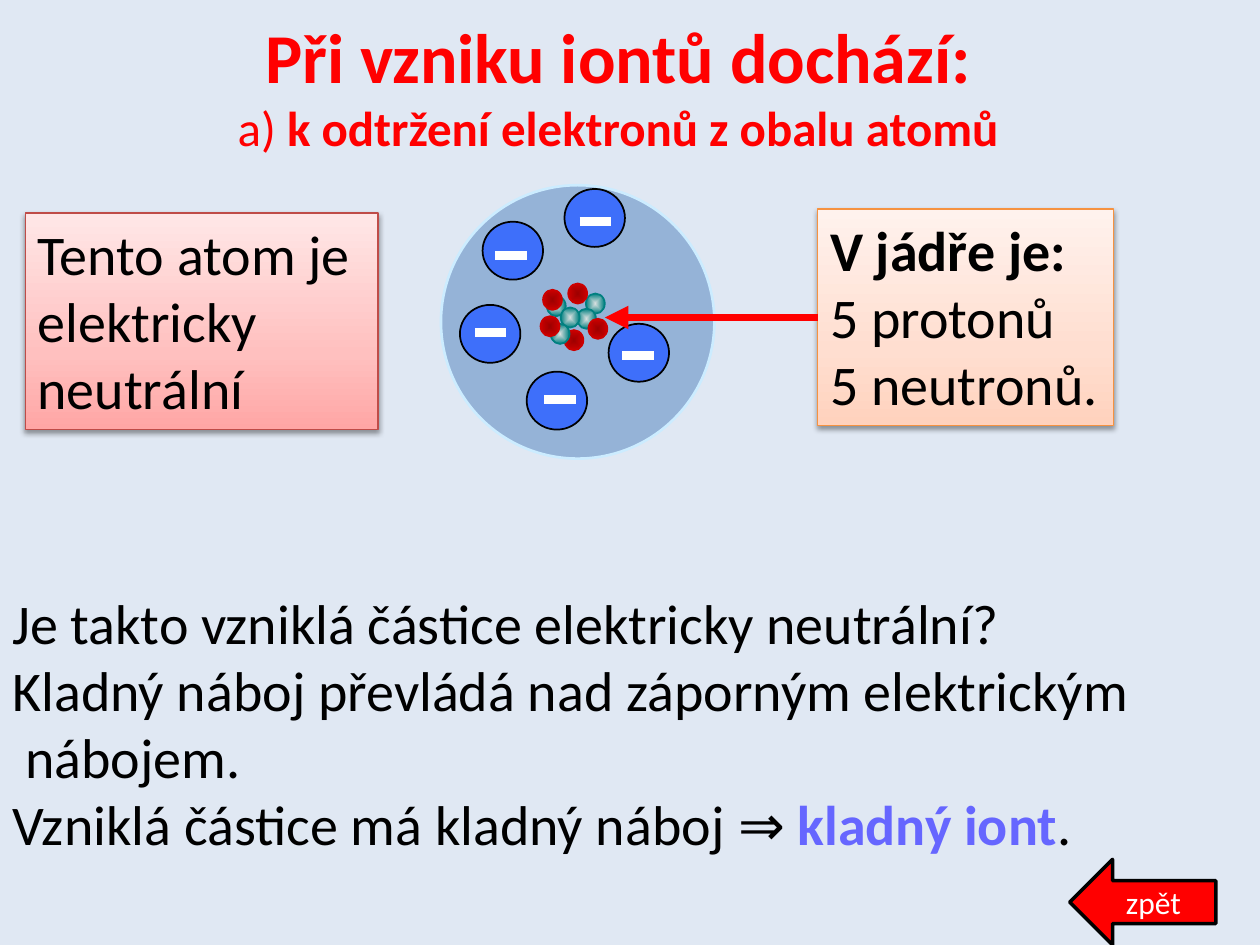
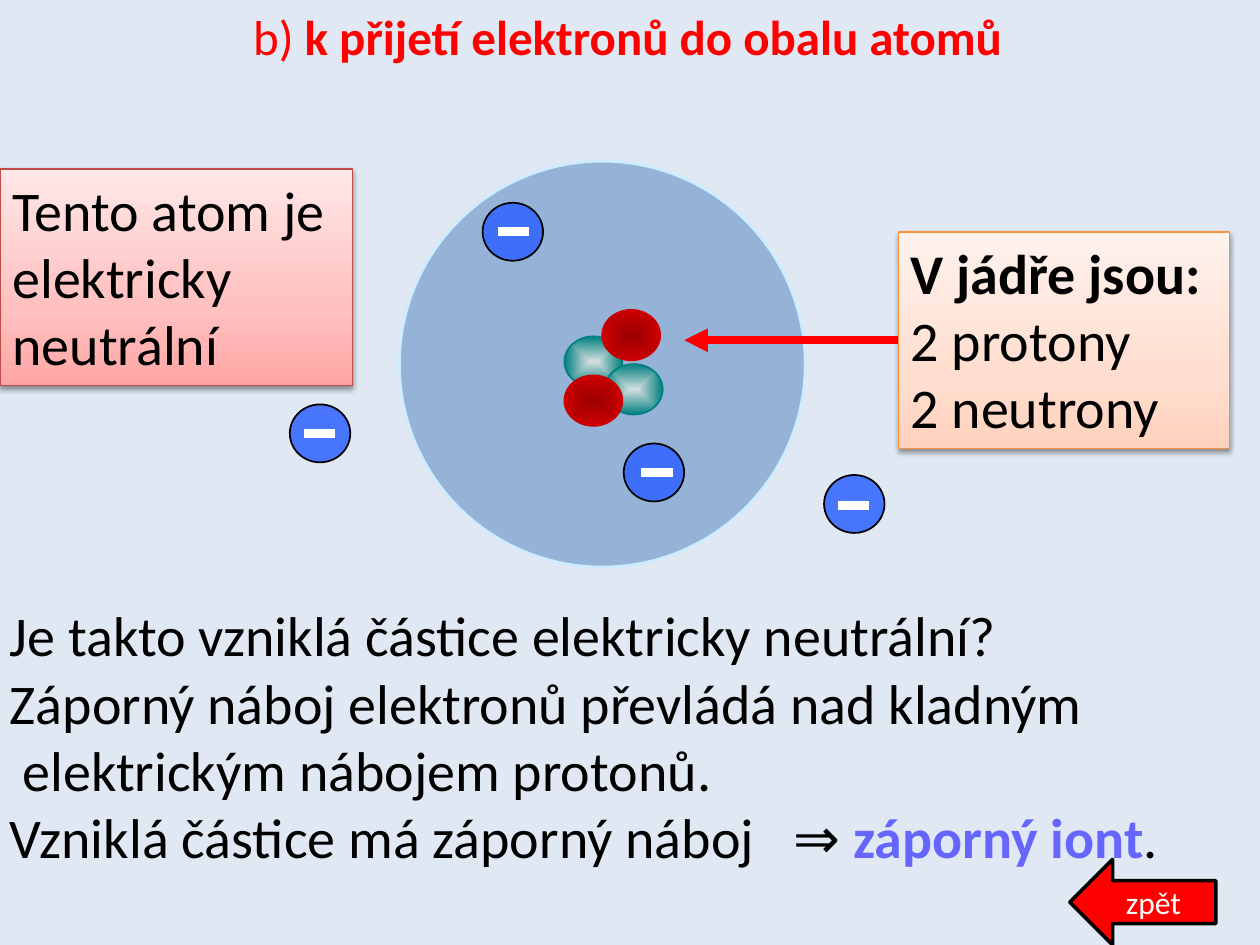
from lxml.etree import SubElement
from pptx import Presentation
from pptx.dml.color import RGBColor
from pptx.enum.shapes import MSO_CONNECTOR, MSO_SHAPE
from pptx.enum.text import MSO_ANCHOR, MSO_AUTO_SIZE, PP_ALIGN
from pptx.oxml.ns import qn
from pptx.util import Inches, Pt

FONT = "Calibri"
BACKGROUND = "E0E8F3"
RED, BLACK, WHITE, ION_BLUE = "FF0000", "000000", "FFFFFF", "6666FF"
SHELL, SHELL_EDGE, ELECTRON = "95B3D7", "CCECFF", "3366FF"
PROTON = [(0, "9E0000"), (100, "CC0000")]
NEUTRON = [(0, "D5DEDE"), (100, "008080")]
PEACH = [(0, "FFD2BD"), (35, "FFDED0"), (100, "FFF2ED")]
PINK = [(0, "FFA6A5"), (35, "FFC0BF"), (100, "FFE7E7")]
BOLD = {"bold": True}
ION = {"bold": True, "color": ION_BLUE}
ELECTRON_SIZE = (0.48, 0.46)
MINUS_WIDTH = 0.25


def add_piece(shapes, kind, place, fill, edge, width, alpha=None, card=False):
    """Add a shape; a list fill is a gradient, linear with shadow for a card, else from the centre."""
    piece = shapes.add_shape(kind, *[Inches(value) for value in place])
    piece.shadow.inherit = False
    properties = piece.element.spPr
    if isinstance(fill, list):
        gradient = SubElement(properties, qn("a:gradFill"), rotWithShape="1")
        properties.find(qn("a:prstGeom")).addnext(gradient)
        stops = SubElement(gradient, qn("a:gsLst"))
        for position, color in fill:
            stop = SubElement(stops, qn("a:gs"), pos=str(position * 1000))
            SubElement(stop, qn("a:srgbClr"), val=color)
        if card:
            SubElement(gradient, qn("a:lin"), ang="16200000", scaled="1")
        else:
            centre = SubElement(gradient, qn("a:path"), path="shape")
            SubElement(centre, qn("a:fillToRect"), l="50000", t="50000", r="50000", b="50000")
    else:
        piece.fill.solid()
        piece.fill.fore_color.rgb = RGBColor.from_string(fill)
    if alpha:
        tint = properties.find(qn("a:solidFill")).find(qn("a:srgbClr"))
        SubElement(tint, qn("a:alpha"), val=str(alpha * 1000))
    if card:
        shadow = SubElement(properties.find(qn("a:effectLst")), qn("a:outerShdw"), blurRad="40000",
                            dist="20000", dir="5400000", rotWithShape="0")
        tint = SubElement(shadow, qn("a:srgbClr"), val=BLACK)
        SubElement(tint, qn("a:alpha"), val="38000")
    piece.line.color.rgb = RGBColor.from_string(edge)
    piece.line.width = Pt(width)
    return piece


def write(box, paragraphs, size=32, color=BLACK, align=PP_ALIGN.LEFT, anchor=MSO_ANCHOR.TOP,
          wrap=True, grow=True, tab=None):
    """Fill a box with paragraphs, each a list of (text, format) spans."""
    frame = box.text_frame
    frame.word_wrap = wrap
    frame.vertical_anchor = anchor
    frame.auto_size = MSO_AUTO_SIZE.SHAPE_TO_FIT_TEXT if grow else MSO_AUTO_SIZE.NONE
    for index, spans in enumerate(paragraphs):
        para = frame.add_paragraph() if index else frame.paragraphs[0]
        para.alignment = align
        if tab:
            tabs = SubElement(para._p.get_or_add_pPr(), qn("a:tabLst"))
            SubElement(tabs, qn("a:tab"), pos=str(Inches(tab)), algn="l")
        for text, style in spans:
            span = para.add_run()
            span.text = text
            span.font.name = FONT
            span.font.size = Pt(style.get("size", size))
            span.font.bold = style.get("bold", False)
            span.font.color.rgb = RGBColor.from_string(style.get("color", color))


# Nucleons: kind, left, top. Electrons: left, top, then left and height of the minus sign.
pages = [
    {
        "title_place": (0, 0.06, 9.81, 1.25),
        "title": [[("Při vzniku iontů dochází:", {"bold": True, "size": 40})],
                  [("a) ", {}), ("k odtržení elektronů z obalu atomů", BOLD)]],
        "shell": (3.5, 1.47, 2.17, 2.17),
        "nucleon_size": (0.15, 0.16),
        "nucleons": [(NEUTRON, 4.34, 2.35), (NEUTRON, 4.65, 2.33), (PROTON, 4.31, 2.3),
                     (NEUTRON, 4.58, 2.45), (PROTON, 4.51, 2.25), (PROTON, 4.48, 2.62),
                     (NEUTRON, 4.45, 2.44), (NEUTRON, 4.37, 2.57), (PROTON, 4.29, 2.51),
                     (PROTON, 4.67, 2.53)],
        "electrons": [(4.48, 1.5, 4.6, 1.76), (3.83, 1.76, 3.93, 2.03), (3.65, 2.42, 3.77, 2.64),
                      (4.18, 2.95, 4.32, 3.17), (4.83, 2.57, 4.94, 2.82)],
        "nucleus_place": (6.49, 1.66, 2.35, 1.72),
        "nucleus_text": ["V jádře je:", "5 protonů", "5 neutronů."],
        "arrow_tip": 4.8,
        "neutral_place": (0.2, 1.69, 2.8, 1.72),
        "answer_place": (0, 4.62, 10, 2.26),
        "answer": [[("Je takto vzniklá částice elektricky neutrální?", {})],
                   [("Kladný náboj převládá nad záporným elektrickým", {})],
                   [(" nábojem.", {})],
                   [("Vzniklá částice má kladný náboj ⇒ ", {}), ("kladný iont", ION), (".", {})]],
        "tab": None,
    },
    {
        "title_place": (-0.02, 0, 10, 0.57),
        "title": [[("b) ", {}), ("k přijetí elektronů do obalu atomů", BOLD)]],
        "shell": (3.17, 1.28, 3.22, 3.22),
        "nucleon_size": (0.46, 0.4),
        "nucleons": [(NEUTRON, 4.48, 2.67), (PROTON, 4.78, 2.46), (NEUTRON, 4.8, 2.89),
                     (PROTON, 4.48, 2.98)],
        "electrons": [(3.83, 1.61, 3.95, 1.84), (4.95, 3.52, 5.09, 3.75),
                      (6.54, 3.77, 6.65, 4.01), (2.3, 3.21, 2.41, 3.44)],
        "nucleus_place": (7.13, 1.84, 2.63, 1.72),
        "nucleus_text": ["V jádře jsou:", "2 protony", "2 neutrony"],
        "arrow_tip": 5.43,
        "neutral_place": (0, 1.34, 2.8, 1.72),
        "answer_place": (-0.02, 4.72, 10.02, 2.26),
        "answer": [[("Je takto vzniklá částice elektricky neutrální?", {})],
                   [("Záporný náboj elektronů převládá nad kladným", {})],
                   [(" elektrickým nábojem protonů.", {})],
                   [("Vzniklá částice má záporný náboj\t⇒ ", {}), ("záporný iont", ION),
                    (".", {})]],
        "tab": 6.22,
    },
]

deck = Presentation()
deck.slide_width, deck.slide_height = Inches(10), Inches(7.5)

for content in pages:
    page = deck.slides.add_slide(deck.slide_layouts[6])
    shapes = page.shapes
    page.background.fill.solid()
    page.background.fill.fore_color.rgb = RGBColor.from_string(BACKGROUND)

    title = shapes.add_textbox(*[Inches(value) for value in content["title_place"]])
    write(title, content["title"], size=28, color=RED, align=PP_ALIGN.CENTER)

    # Atom
    add_piece(shapes, MSO_SHAPE.OVAL, content["shell"], SHELL, SHELL_EDGE, 1.5)
    nucleus = shapes.add_group_shape()
    for kind, left, top in content["nucleons"]:
        place = (left, top, *content["nucleon_size"])
        add_piece(nucleus.shapes, MSO_SHAPE.OVAL, place, kind, kind[-1][1], 1)
    strokes = []
    for left, top, minus_left, minus_y in content["electrons"]:
        add_piece(shapes, MSO_SHAPE.OVAL, (left, top, *ELECTRON_SIZE), ELECTRON, BLACK, 1, alpha=88)
        strokes.append((minus_left, minus_left + MINUS_WIDTH, minus_y, WHITE, 5))

    # Text
    answer = shapes.add_textbox(*[Inches(value) for value in content["answer_place"]])
    write(answer, content["answer"], tab=content["tab"])
    callout = add_piece(shapes, MSO_SHAPE.RECTANGLE, content["nucleus_place"], PEACH, "F69240", 0.75,
                        card=True)
    heading, *counts = content["nucleus_text"]
    write(callout, [[(heading, BOLD)]] + [[(count, {})] for count in counts], wrap=False)
    neutral = add_piece(shapes, MSO_SHAPE.RECTANGLE, content["neutral_place"], PINK, "BF4C48", 0.75,
                        card=True)
    write(neutral, [[("Tento atom je elektricky neutrální", {})]])

    # Minus signs, then the arrow from the callout to the nucleus
    left, top, width, height = content["nucleus_place"]
    strokes.append((left, content["arrow_tip"], top + height / 2, RED, 4.5))
    for start, end, y, color, weight in strokes:
        stroke = shapes.add_connector(MSO_CONNECTOR.STRAIGHT, Inches(start), Inches(y),
                                      Inches(end), Inches(y))
        stroke.line.color.rgb = RGBColor.from_string(color)
        stroke.line.width = Pt(weight)
        SubElement(stroke.element.spPr, qn("a:effectLst"))
    arrow = stroke
    arrow.begin_connect(callout, 1)
    SubElement(arrow.element.spPr.find(qn("a:ln")), qn("a:tailEnd"), type="triangle")

    back = add_piece(shapes, MSO_SHAPE.LEFT_ARROW, (8.49, 6.82, 1.16, 0.68), RED, BLACK, 2)
    write(back, [[("zpět", {})]], size=18, color=WHITE, align=PP_ALIGN.CENTER,
          anchor=MSO_ANCHOR.MIDDLE, grow=False)

deck.save("out.pptx")
